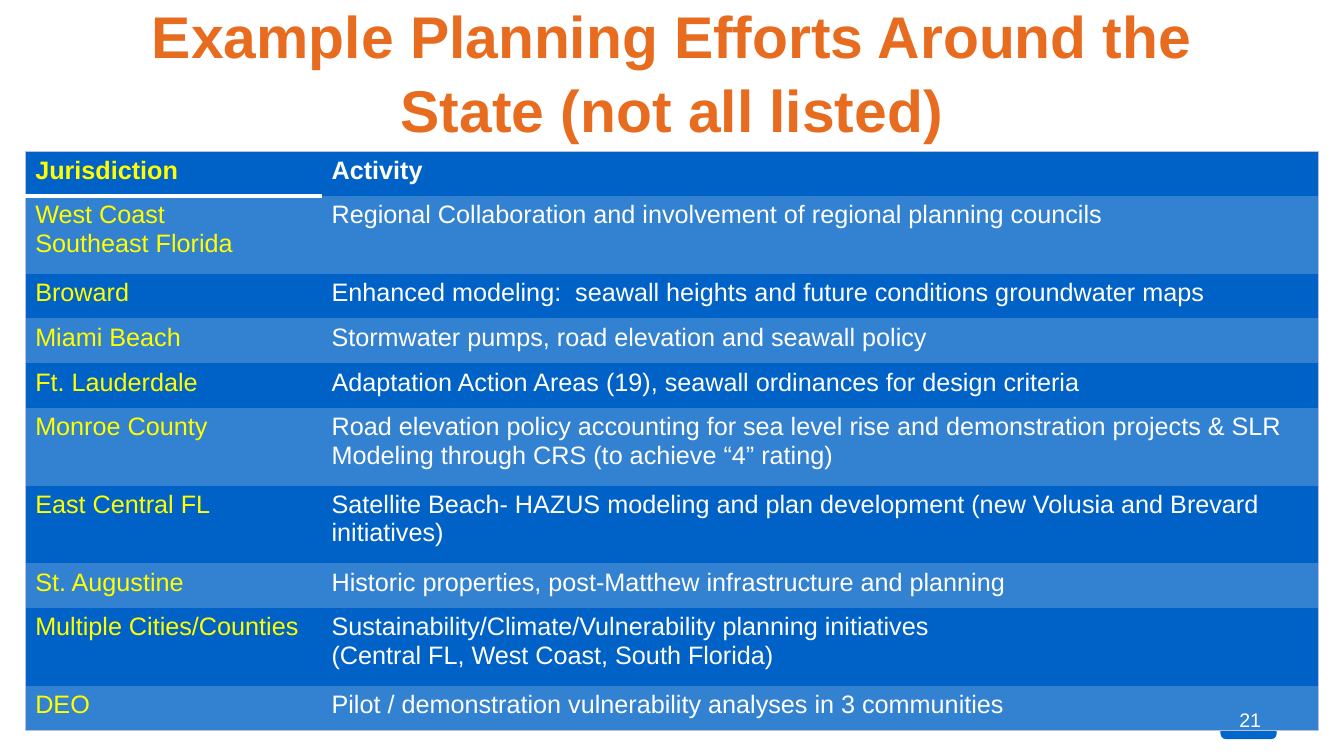
"""Build the slide on planning efforts around the state."""
from dataclasses import dataclass

from lxml.etree import SubElement
from pptx import Presentation
from pptx.dml.color import RGBColor
from pptx.enum.shapes import MSO_SHAPE
from pptx.enum.text import MSO_ANCHOR, MSO_AUTO_SIZE, PP_ALIGN
from pptx.oxml.ns import qn
from pptx.util import Inches, Pt


@dataclass(frozen=True)
class Theme:
    """Colours, type sizes and the font of the slide."""
    font: str = "Arial"
    orange: str = "E86C1F"
    yellow: str = "FFFF00"
    white: str = "FFFFFF"
    badge: str = "0066CC"
    dark: str = "0062C6"
    light: str = "3381D1"
    edge: str = "B8C1E3"
    title: int = 42
    body: int = 18
    page: int = 14


THEME = Theme()
PLAIN = "{2D5ABB26-0587-4C30-8999-92F81FD0307C}"
ROWS = [
    ("Jurisdiction", "Activity"),
    ("West Coast\nSoutheast Florida",
     "Regional Collaboration and involvement of regional planning councils"),
    ("Broward",
     "Enhanced modeling:  seawall heights and future conditions groundwater maps"),
    ("Miami Beach", "Stormwater pumps, road elevation and seawall policy"),
    ("Ft. Lauderdale",
     "Adaptation Action Areas (19), seawall ordinances for design criteria"),
    ("Monroe County",
     "Road elevation policy accounting for sea level rise and demonstration "
     "projects & SLR Modeling through CRS (to achieve “4” rating)"),
    ("East Central FL",
     "Satellite Beach- HAZUS modeling and plan development "
     "(new Volusia and Brevard initiatives)"),
    ("St. Augustine",
     "Historic properties, post-Matthew infrastructure and planning"),
    ("Multiple Cities/Counties",
     "Sustainability/Climate/Vulnerability planning initiatives\n"
     "(Central FL, West Coast, South Florida)"),
    ("DEO", "Pilot / demonstration vulnerability analyses in 3 communities"),
]
TALL = {1, 5, 6, 8}


def grid(*units):
    """Turn grid units, twelve to the inch, into lengths."""
    return [Inches(unit / 12) for unit in units]


def style(frame, size, color, bold=False, align=PP_ALIGN.LEFT):
    """Format every run of a text frame."""
    for para in frame.paragraphs:
        para.alignment = align
        for run in para.runs:
            font = run.font
            font.name, font.size, font.bold = THEME.font, Pt(size), bold
            font.color.rgb = RGBColor.from_string(color)


def add_title(slide, text):
    """Fill and place the title."""
    title = slide.shapes.title
    title.left, title.top, title.width, title.height = grid(8, 1, 144, 14.76)
    frame = title.text_frame
    frame.text = text
    frame.word_wrap = True
    frame.auto_size = MSO_AUTO_SIZE.NONE
    frame.vertical_anchor = MSO_ANCHOR.MIDDLE
    frame.paragraphs[0].line_spacing = 1.05
    style(frame, THEME.title, THEME.orange, True, PP_ALIGN.CENTER)


def add_badge(slide):
    """Add the rounded tab beneath the page number."""
    badge = slide.shapes.add_shape(
        MSO_SHAPE.ROUNDED_RECTANGLE, *grid(145.3, 84, 6.7, 4))
    badge.shadow.inherit = False
    badge.fill.solid()
    badge.fill.fore_color.rgb = RGBColor.from_string(THEME.badge)
    badge.line.fill.background()


def add_page(slide, text):
    """Add the page number."""
    frame = slide.shapes.add_textbox(*grid(114, 83.64, 37.32, 6.24)).text_frame
    frame.word_wrap = True
    frame.text = text
    style(frame, THEME.page, THEME.white, align=PP_ALIGN.RIGHT)


def rule(cell, side, color, width):
    """Draw one border of a cell."""
    line = SubElement(cell._tc.get_or_add_tcPr(), qn(f"a:ln{side}"),
                      w=str(Pt(width)))
    fill = SubElement(line, qn("a:solidFill"))
    SubElement(fill, qn("a:srgbClr"), val=color)


def set_cell(cell, text, row, col):
    """Write and format one table cell."""
    cell.text = text
    color = THEME.white if col else THEME.yellow
    style(cell.text_frame, THEME.body, color, row == 0)
    rule(cell, "R" if col else "L", THEME.edge, 0.75)
    if row == 0:
        rule(cell, "T", THEME.edge, 0.75)
        if col == 0:
            rule(cell, "B", THEME.white, 3)
    elif row == len(ROWS) - 1:
        rule(cell, "B", THEME.edge, 0.75)
    cell.fill.solid()
    shade = THEME.light if row % 2 else THEME.dark
    cell.fill.fore_color.rgb = RGBColor.from_string(shade)


def add_grid(slide):
    """Add the table of jurisdictions and activities."""
    wide, high, first, tall = grid(154, 69, 35.28, 9.25)
    shape = slide.shapes.add_table(len(ROWS), 2, *grid(3, 18), wide, high)
    table = shape.table
    table.first_row = table.horz_banding = False
    table._tbl.tblPr.find(qn("a:tableStyleId")).text = PLAIN
    table.columns[0].width, table.columns[1].width = first, wide - first
    short = (high - tall * len(TALL)) // (len(ROWS) - len(TALL))
    for row, texts in enumerate(ROWS):
        table.rows[row].height = tall if row in TALL else short
        for col, text in enumerate(texts):
            set_cell(table.cell(row, col), text, row, col)


def main():
    """Build and save the slide."""
    deck = Presentation()
    deck.slide_width, deck.slide_height = grid(160, 90)
    slide = deck.slides.add_slide(deck.slide_layouts[5])
    add_badge(slide)
    add_title(slide, "Example Planning Efforts Around the State (not all listed)")
    add_grid(slide)
    add_page(slide, "21")
    deck.save("out.pptx")


if __name__ == "__main__":
    main()
